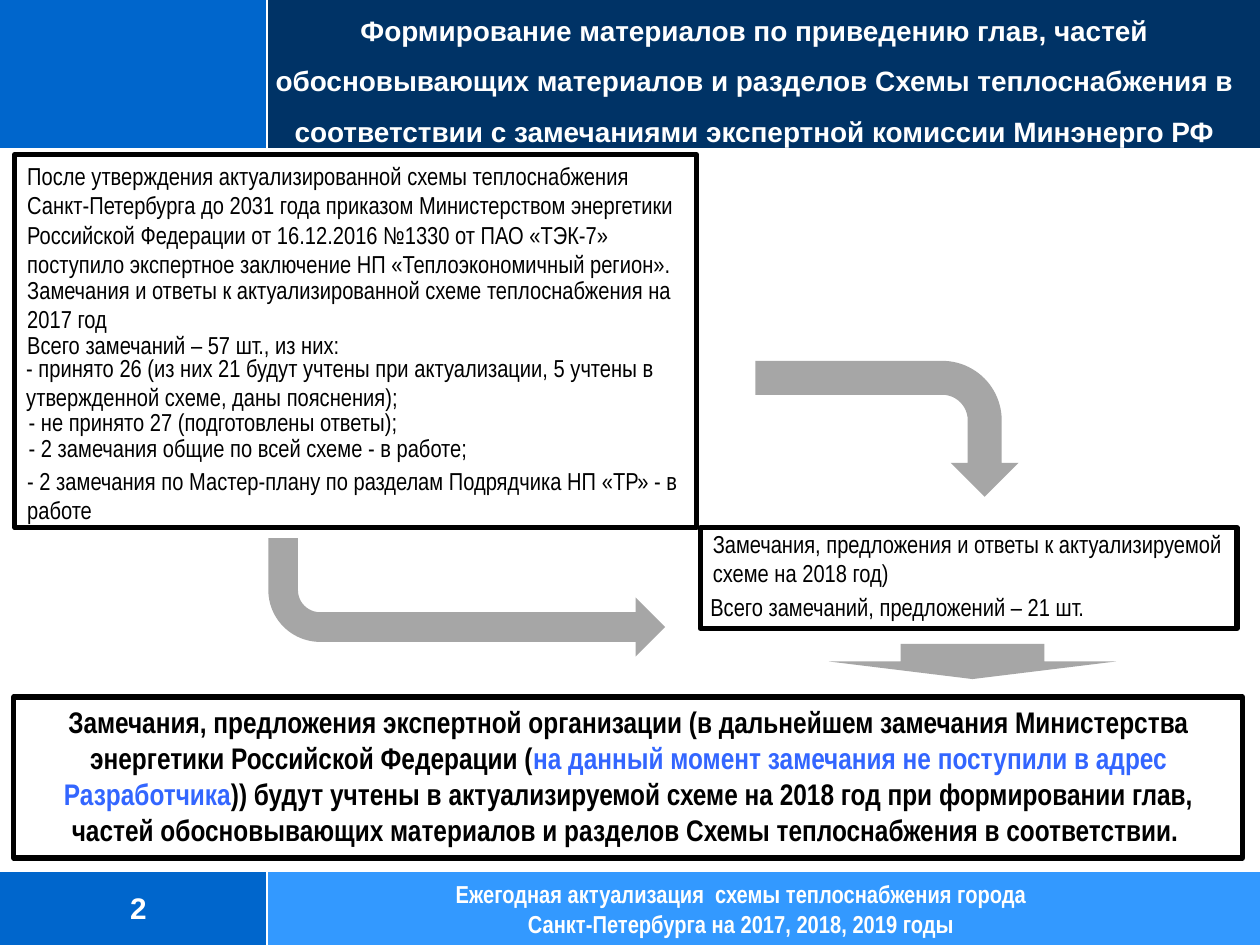
from lxml import etree
from pptx import Presentation
from pptx import util as u
from pptx.dml.color import RGBColor
from pptx.enum import shapes, text
from pptx.oxml.ns import qn

WIDTH, HEIGHT = 25.4, 19.05
SIDE = 5.38
HEADER = 3
FOOTER = HEIGHT - 1.5
BLACK, WHITE, GRAY = "000000", "FFFFFF", "A6A6A6"
BLUE, NAVY, SKY, ACCENT = "0066CC", "003366", "3399FF", "3366FF"

NOTE = dict(name="Arial Narrow", size=u.Pt(14), bold=False)
FOOTNOTE = dict(NOTE, bold=True)
CONCLUSION = dict(FOOTNOTE, size=u.Pt(17))
TITLE = dict(name="Arial", size=u.Pt(16), bold=True)
NUMBER = dict(TITLE, size=u.Pt(17))

CENTERED = dict(alignment=text.PP_ALIGN.CENTER)
GROWING = dict(auto_size=text.MSO_AUTO_SIZE.SHAPE_TO_FIT_TEXT)
MIDDLE = dict(vertical_anchor=text.MSO_ANCHOR.MIDDLE, margin_left=0,
              margin_right=0, margin_top=0, margin_bottom=0)

NOTES = [
    ((0.3, 3.12, 13.74, 2.64),
     "После утверждения актуализированной схемы теплоснабжения Санкт-Петербурга "
     "до 2031 года приказом Министерством энергетики Российской Федерации "
     "от 16.12.2016 №1330 от ПАО «ТЭК-7» поступило экспертное заключение "
     "НП «Теплоэкономичный регион»."),
    ((0.3, 5.41, 13.69, 1.45),
     "Замечания и ответы к актуализированной схеме теплоснабжения на 2017 год"),
    ((0.3, 6.53, 13.77, 0.86), "Всего замечаний – 57 шт., из них:"),
    ((0.28, 6.99, 13.72, 1.45),
     "- принято 26 (из них 21 будут учтены при актуализации, 5 учтены в "
     "утвержденной схеме, даны пояснения);"),
    ((0.33, 8.08, 12.6, 0.86), "- не принято 27 (подготовлены ответы);"),
    ((0.33, 8.61, 12.6, 0.86), "- 2 замечания общие по всей схеме - в работе;"),
    ((0.3, 9.27, 13.82, 1.45),
     "- 2 замечания по Мастер-плану по разделам Подрядчика НП «ТР» - в работе"),
    ((14.12, 10.54, 10.82, 1.45),
     "Замечания, предложения и ответы к актуализируемой схеме на 2018 год)"),
    ((14.07, 11.81, 10.82, 0.86), "Всего замечаний, предложений – 21 шт."),
]
FRAMES = [
    (0.3, 3.12, 13.74, 7.52),
    (14.12, 10.64, 10.82, 2.03),
    (0.28, 14.05, 24.77, 3.25),
]


def color(value):
    return RGBColor.from_string(value)


def lengths(box):
    return [u.Cm(value) for value in box]


def apply(target, values):
    for name, value in values.items():
        setattr(target, name, value)


def add_block(slide, kind, box, fill):
    shape = slide.shapes.add_shape(kind, *lengths(box))
    shape.shadow.inherit = False
    shape.fill.solid()
    shape.fill.fore_color.rgb = color(fill)
    shape.line.fill.background()
    return shape


def add_frame(slide, box):
    shape = slide.shapes.add_shape(shapes.MSO_SHAPE.RECTANGLE, *lengths(box))
    shape.shadow.inherit = False
    shape.fill.background()
    shape.line.color.rgb = color(BLACK)
    shape.line.width = u.Pt(3)


def add_rule(slide, *ends):
    line = slide.shapes.add_connector(shapes.MSO_CONNECTOR.STRAIGHT, *lengths(ends))
    line.line.color.rgb = color(WHITE)
    line.line.width = u.Pt(1.25)
    etree.SubElement(line._element.spPr, qn("a:effectLst"))


def add_text(slide, box, paragraphs, font, frame_format, paragraph_format):
    frame = slide.shapes.add_textbox(*lengths(box)).text_frame
    frame.word_wrap = True
    apply(frame, frame_format)
    for index, runs in enumerate(paragraphs):
        paragraph = frame.add_paragraph() if index else frame.paragraphs[0]
        apply(paragraph, paragraph_format)
        for content, fill in runs:
            run = paragraph.add_run()
            run.text = content
            apply(run.font, font)
            run.font.color.rgb = color(fill)


def add_bands(slide):
    for top, height, fill in ((FOOTER, HEIGHT - FOOTER, SKY), (0, HEADER, NAVY)):
        rectangle = shapes.MSO_SHAPE.RECTANGLE
        add_block(slide, rectangle, (0, top, SIDE, height), BLUE)
        add_block(slide, rectangle, (SIDE, top, WIDTH - SIDE, height), fill)
        add_rule(slide, SIDE, top, SIDE, top + height)
    for level in (FOOTER, HEADER):
        add_rule(slide, 0, level, WIDTH, level)


def add_captions(slide):
    title = ("Формирование материалов по приведению глав, частей обосновывающих "
             "материалов и разделов Схемы теплоснабжения в соответствии с "
             "замечаниями экспертной комиссии Минэнерго РФ")
    add_text(slide, (5.28, 0, 19.86, 2.92), [[(title, WHITE)]], TITLE, MIDDLE,
             dict(CENTERED, line_spacing=1.5))
    footer = ("Ежегодная актуализация  схемы теплоснабжения города",
              "Санкт-Петербурга на 2017, 2018, 2019 годы")
    add_text(slide, (8.59, 17.6, 12.7, 1.45), [[(line, WHITE)] for line in footer],
             FOOTNOTE, GROWING, CENTERED)
    add_text(slide, (0, FOOTER, 5.33, 1.5), [[("2", WHITE)]], NUMBER,
             dict(MIDDLE, margin_left=u.Cm(0.25)), CENTERED)


def add_conclusion(slide):
    runs = [
        ("Замечания, предложения экспертной организации (в дальнейшем замечания "
         "Министерства энергетики Российской Федерации (", BLACK),
        ("на данный момент замечания не поступили в адрес Разработчика", ACCENT),
        (")) будут учтены в актуализируемой схеме на 2018 год при формировании "
         "глав, частей обосновывающих материалов и разделов Схемы теплоснабжения "
         "в соответствии. ", BLACK),
    ]
    add_text(slide, (0.18, 14.07, 24.99, 3.25), [runs], CONCLUSION, GROWING, CENTERED)


def add_arrows(slide):
    bent = shapes.MSO_SHAPE.BENT_ARROW
    turning_down = add_block(slide, bent, (16.51, 5.99, 2.74, 5.31), GRAY)
    turning_down.rotation = 90
    turning_right = add_block(slide, bent, (5.41, 10.85, 8, 2.39), GRAY)
    turning_right._element.spPr.xfrm.set("flipV", "1")
    add_block(slide, shapes.MSO_SHAPE.DOWN_ARROW, (16.71, 12.98, 5.79, 0.71), GRAY)


def main():
    presentation = Presentation()
    presentation.slide_width = u.Cm(WIDTH)
    presentation.slide_height = u.Cm(HEIGHT)
    slide = presentation.slides.add_slide(presentation.slide_layouts[6])
    add_bands(slide)
    add_conclusion(slide)
    add_captions(slide)
    for box in FRAMES:
        add_frame(slide, box)
    add_arrows(slide)
    for box, content in NOTES:
        add_text(slide, box, [[(content, BLACK)]], NOTE, GROWING, {})
    presentation.save("out.pptx")


if __name__ == "__main__":
    main()
